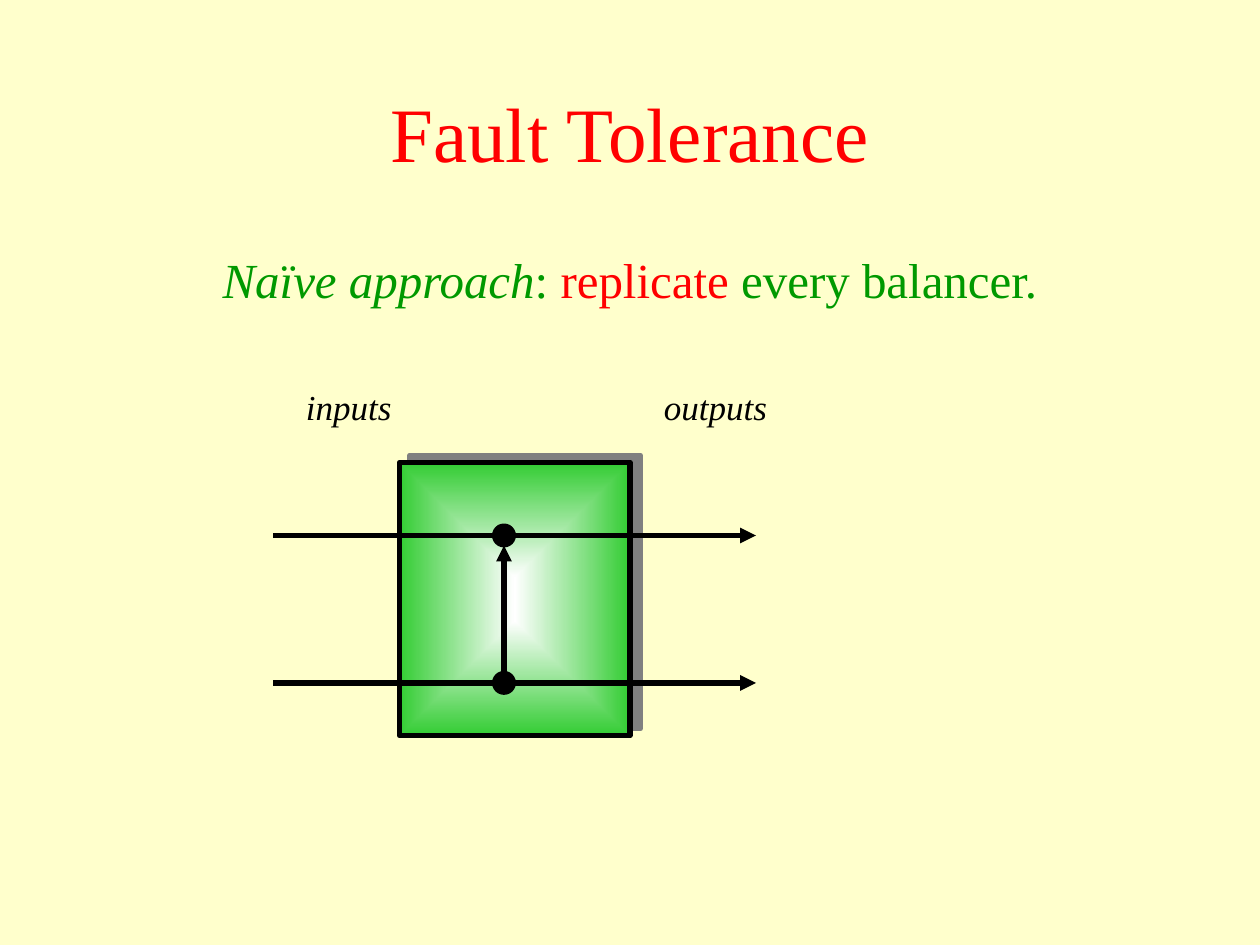
from lxml import etree
from pptx import Presentation
from pptx.dml.color import RGBColor
from pptx.enum.shapes import MSO_CONNECTOR, MSO_SHAPE
from pptx.enum.text import MSO_ANCHOR, PP_ALIGN
from pptx.oxml import parse_xml
from pptx.oxml.ns import nsdecls, qn
from pptx.util import Inches, Pt

CREAM = RGBColor(0xFF, 0xFF, 0xCC)
RED = RGBColor(0xFF, 0x00, 0x00)
GREEN = RGBColor(0x00, 0x99, 0x00)
BLACK = RGBColor(0x00, 0x00, 0x00)
FONT = "Times New Roman"

GRADIENT = f"""<a:gradFill {nsdecls('a')} rotWithShape="0"><a:gsLst>
<a:gs pos="0"><a:srgbClr val="FFFFFF"/></a:gs>
<a:gs pos="100000"><a:srgbClr val="33CC33"/></a:gs></a:gsLst>
<a:path path="shape"><a:fillToRect l="50000" t="50000" r="50000" b="50000"/></a:path>
</a:gradFill>"""
SHADOW = f"""<a:outerShdw {nsdecls('a')} dist="91440" dir="19560000" algn="ctr" rotWithShape="0">
<a:srgbClr val="808080"/></a:outerShdw>"""


def add_text(shapes, bounds, size, spans, align=PP_ALIGN.LEFT, anchor=MSO_ANCHOR.TOP, wrap=True):
    """Add a one-line text box; each span is (text, colour, italic)."""
    frame = shapes.add_textbox(*map(Inches, bounds)).text_frame
    frame.word_wrap = wrap
    frame.vertical_anchor = anchor
    para = frame.paragraphs[0]
    para.alignment = align
    for text, color, italic in spans:
        span = para.add_run()
        span.text = text
        span.font.color.rgb = color
        for name, value in {"name": FONT, "size": Pt(size), "italic": italic}.items():
            setattr(span.font, name, value)


def add_arrow(shapes, start, end):
    arrow = shapes.add_connector(MSO_CONNECTOR.STRAIGHT, *map(Inches, start + end))
    arrow.line.color.rgb = BLACK
    arrow.line.width = Pt(3)
    etree.SubElement(arrow.line._get_or_add_ln(), qn("a:tailEnd"), type="triangle")
    etree.SubElement(arrow._element.spPr, qn("a:effectLst"))


deck = Presentation()
deck.slide_width, deck.slide_height = Inches(10), Inches(7.5)
page = deck.slides.add_slide(deck.slide_layouts[6])
page.background.fill.solid()
page.background.fill.fore_color.rgb = CREAM

add_text(page.shapes, (0.75, 0.42, 8.5, 1.25), 44, [("Fault Tolerance", RED, False)],
         PP_ALIGN.CENTER, MSO_ANCHOR.MIDDLE)
approach = [
    ("Naïve approach", GREEN, True),
    (": ", GREEN, False),
    ("replicate", RED, False),
    (" every balancer.", GREEN, False),
]
add_text(page.shapes, (0, 1.93, 10, 0.57), 28, approach, PP_ALIGN.CENTER)

# Balancer: a shaded box crossed by two wires
diagram = page.shapes.add_group_shape().shapes
balancer = diagram.add_shape(MSO_SHAPE.RECTANGLE, *map(Inches, (3.17, 3.67, 1.83, 2.17)))
balancer.line.color.rgb = BLACK
balancer.line.width = Pt(3)
balancer.shadow.inherit = False
properties = balancer._element.spPr
properties.find(qn("a:ln")).addprevious(parse_xml(GRADIENT))
properties.find(qn("a:effectLst")).append(parse_xml(SHADOW))

for label, left, width in [("outputs", 5.17, 1.02), ("inputs", 2.33, 0.88)]:
    add_text(diagram, (left, 3.01, width, 0.43), 20, [(label, BLACK, True)], wrap=False)

WIRES = (4.25, 5.42)
for wire_y in WIRES:
    add_arrow(diagram, (2.17, wire_y), (6, wire_y))
add_arrow(diagram, (4, 5.33), (4, 4.33))

DOT = 0.18
for wire_y in WIRES:
    dot = diagram.add_shape(MSO_SHAPE.OVAL, Inches(4 - DOT / 2), Inches(wire_y - DOT / 2),
                            Inches(DOT), Inches(DOT))
    dot.fill.solid()
    dot.fill.fore_color.rgb = BLACK
    dot.line.color.rgb = BLACK
    dot.line.width = Pt(0.75)
    dot.shadow.inherit = False

deck.save("out.pptx")
